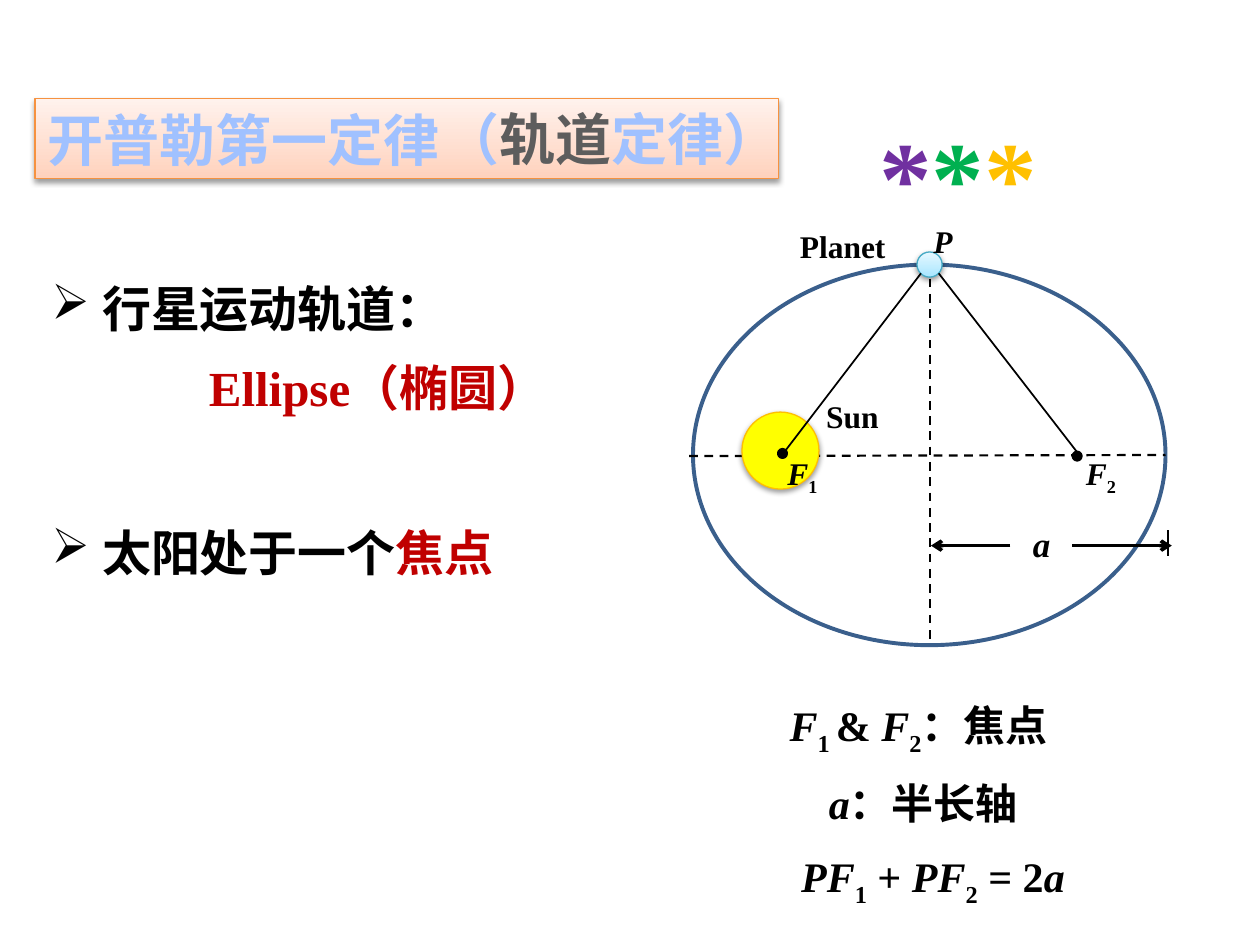
from dataclasses import dataclass
from typing import Optional

import lxml.etree
import pptx
import pptx.dml.color
import pptx.enum.dml
import pptx.enum.shapes
import pptx.enum.text
import pptx.oxml.ns
import pptx.util

Pt = pptx.util.Pt
qn = pptx.oxml.ns.qn
SHAPES = pptx.enum.shapes.MSO_SHAPE


@dataclass(frozen=True)
class Theme:
    font: str = "Times New Roman"
    ink: str = "000000"
    accent: str = "C00000"
    title_blue: str = "A0C1FF"
    title_gray: str = "5D5D5D"
    title_fill: tuple = ("FFD2BD", "FFF2ED")
    title_line: str = "F69240"
    stars: tuple = ("7030A0", "00B050", "FFC000")
    orbit: str = "3A5F8C"
    sun: str = "FFFF00"
    sun_line: str = "FFC000"
    planet_fill: tuple = ("A7E6FF", "E7F8FF")
    planet_line: str = "46AAC5"
    star_size: float = 60
    title_size: float = 32
    body_size: float = 28
    formula_size: float = 24
    axis_size: float = 20
    label_size: float = 18


THEME = Theme()


@dataclass(frozen=True)
class Run:
    text: str
    color: str = THEME.ink
    italic: bool = False
    subscript: bool = False


@dataclass(frozen=True)
class Label:
    box: tuple
    runs: tuple
    size: float
    spacing: float = 1.25
    bullet: bool = False


@dataclass(frozen=True)
class Oval:
    box: tuple
    fill: Optional[object]
    line: str
    width: float
    shadow: bool = False


@dataclass(frozen=True)
class Line:
    start: tuple
    end: tuple
    width: float = 1
    dashed: bool = False
    arrow: bool = False


def rgb(value: str):
    return pptx.dml.color.RGBColor.from_string(value)


def variable(name: str, subscript: str = "") -> tuple:
    """An italic symbol with an optional upright subscript."""
    symbol = (Run(name, italic=True),)
    return symbol + ((Run(subscript, subscript=True),) if subscript else ())


def write_text(shape, label: Label) -> None:
    frame = shape.text_frame
    frame.word_wrap = True
    frame.auto_size = pptx.enum.text.MSO_AUTO_SIZE.NONE
    paragraph = frame.paragraphs[0]
    layout = dict(alignment=pptx.enum.text.PP_ALIGN.LEFT,
                  line_spacing=label.spacing, space_before=Pt(0))
    for name, value in layout.items():
        setattr(paragraph, name, value)
    if label.bullet:
        properties = paragraph._p.get_or_add_pPr()
        properties.set("marL", str(Pt(29)))
        properties.set("indent", str(-Pt(29)))
        lxml.etree.SubElement(properties, qn("a:buChar")).set("char", "➢")
    for part in label.runs:
        run = paragraph.add_run()
        run.text = part.text
        font_format = dict(name=THEME.font, size=Pt(label.size), bold=True, italic=part.italic)
        for name, value in font_format.items():
            setattr(run.font, name, value)
        run.font.color.rgb = rgb(part.color)
        if part.subscript:
            run._r.get_or_add_rPr().set("baseline", "-25000")


def add_label(slide, label: Label) -> None:
    write_text(slide.shapes.add_textbox(*map(Pt, label.box)), label)


def paint(shape, fill, line: str, width: float) -> None:
    """A pair of colours makes an upward gradient; None leaves the shape open."""
    if fill is None:
        shape.fill.background()
    elif isinstance(fill, tuple):
        shape.fill.gradient()
        shape.fill.gradient_angle = 90
        for stop, color, position in zip(shape.fill.gradient_stops, fill, (0, 1)):
            stop.color.rgb = rgb(color)
            stop.position = position
    else:
        shape.fill.solid()
        shape.fill.fore_color.rgb = rgb(fill)
    shape.line.color.rgb = rgb(line)
    shape.line.width = Pt(width)


def add_shadow(shape) -> None:
    properties = shape._element.spPr
    effects = properties.find(qn("a:effectLst"))
    if effects is None:
        effects = lxml.etree.SubElement(properties, qn("a:effectLst"))
    shadow = lxml.etree.SubElement(effects, qn("a:outerShdw"))
    values = dict(blurRad=Pt(3.1), dist=Pt(1.6), dir=5400000, rotWithShape=0)
    for name, value in values.items():
        shadow.set(name, str(value))
    color = lxml.etree.SubElement(shadow, qn("a:srgbClr"), val=THEME.ink)
    lxml.etree.SubElement(color, qn("a:alpha"), val="38000")


def add_oval(slide, oval: Oval) -> None:
    shape = slide.shapes.add_shape(SHAPES.OVAL, *map(Pt, oval.box))
    shape.shadow.inherit = False
    paint(shape, oval.fill, oval.line, oval.width)
    if oval.shadow:
        add_shadow(shape)


def add_line(slide, line: Line) -> None:
    connector = slide.shapes.add_connector(
        pptx.enum.shapes.MSO_CONNECTOR.STRAIGHT, *map(Pt, line.start + line.end))
    connector.line.color.rgb = rgb(THEME.ink)
    connector.line.width = Pt(line.width)
    if line.dashed:
        connector.line.dash_style = pptx.enum.dml.MSO_LINE.DASH
    if line.arrow:
        lxml.etree.SubElement(connector.line._get_or_add_ln(), qn("a:tailEnd"), type="arrow")
    lxml.etree.SubElement(connector._element.spPr, qn("a:effectLst"))


def add_title(slide) -> None:
    title = slide.shapes.title
    for name, value in zip(("left", "top", "width", "height"), (20, 56.2, 425, 46)):
        setattr(title, name, Pt(value))
    paint(title, THEME.title_fill, THEME.title_line, 0.75)
    add_shadow(title)
    title.text_frame.vertical_anchor = pptx.enum.text.MSO_ANCHOR.MIDDLE
    write_text(title, Label((), (Run("开普勒第一定律", THEME.title_blue),), THEME.title_size, 1))


def main() -> None:
    presentation = pptx.Presentation()
    presentation.slide_width, presentation.slide_height = Pt(720), Pt(540)
    slide = presentation.slides.add_slide(presentation.slide_layouts[5])
    add_title(slide)

    # Orbit: axes, ellipse, sun and foci
    dot = dict(fill=THEME.ink, line=THEME.ink, width=2)
    parts = (
        Line((531.4, 150.5), (531.4, 370), 1.25, dashed=True),
        Oval((396, 151.2, 270, 217.5), None, THEME.orbit, 2.25),
        Line((393.8, 260.6), (666, 260), 1.25, dashed=True),
        Oval((613.4, 258.5, 4.3, 4.3), **dot),
        Oval((424, 235.5, 44, 44), THEME.sun, THEME.sun_line, 0.75, shadow=True),
        Oval((445, 257, 4.3, 4.3), **dot),
        Oval((524, 144, 14.4, 14.4), THEME.planet_fill, THEME.planet_line, 0.75, shadow=True),
        # Rays from the foci to the planet
        Line((448.6, 257.8), (526.3, 156.2)),
        Line((615.6, 258.5), (536.4, 156.2)),
        # Semi-major axis
        Line((667.4, 303), (667.4, 317.5)),
        Line((612.7, 311.8), (669.6, 311.8), 2, arrow=True),
        Line((577.4, 311.8), (532, 311.8), 2, arrow=True),
    )
    for part in parts:
        (add_line if isinstance(part, Line) else add_oval)(slide, part)

    # Text
    f1, f2, a = variable("F", "1"), variable("F", "2"), variable("a")
    small, body, formula = THEME.label_size, THEME.body_size, THEME.formula_size
    title_end = (Run("（", THEME.title_blue), Run("轨道", THEME.title_gray),
                 Run("定律）", THEME.title_blue))
    sum_rule = (variable("PF", "1") + (Run(" + "),) + variable("PF", "2")
                + (Run(" = 2"),) + a)
    labels = (
        Label((246.2, 56.2, 209.5, 46), title_end, THEME.title_size, 1),
        Label((495.4, 38.2, 129.6, 92), tuple(Run("*", color) for color in THEME.stars),
              THEME.star_size, 1.3),
        Label((22.3, 147, 236, 50), (Run("行星运动轨道："),), body, bullet=True),
        Label((112.3, 192.2, 209.5, 50), (Run("Ellipse（椭圆）", THEME.accent),), body),
        Label((22.3, 286.6, 348.5, 50), (Run("太阳处于一个"), Run("焦点", THEME.accent)),
              body, bullet=True),
        Label((450, 121, 75, 34), (Run("Planet"),), small),
        Label((465, 218.2, 58, 34), (Run("Sun"),), small),
        Label((526.3, 118, 34, 34), variable("P"), small),
        Label((442.8, 250, 34, 34), f1, small),
        Label((613.4, 250, 34, 34), f2, small),
        Label((583.2, 295.2, 28, 31.5), a, THEME.axis_size, 1),
        Label((444.2, 388, 180, 50),
              variable("F", "1 ") + (Run("& "),) + f2 + (Run("：焦点"),), formula),
        Label((466.6, 433.4, 140.4, 50), a + (Run("：半长轴"),), formula),
        Label((450.7, 474.5, 202.3, 50), sum_rule, formula),
    )
    for label in labels:
        add_label(slide, label)
    presentation.save("out.pptx")


if __name__ == "__main__":
    main()
